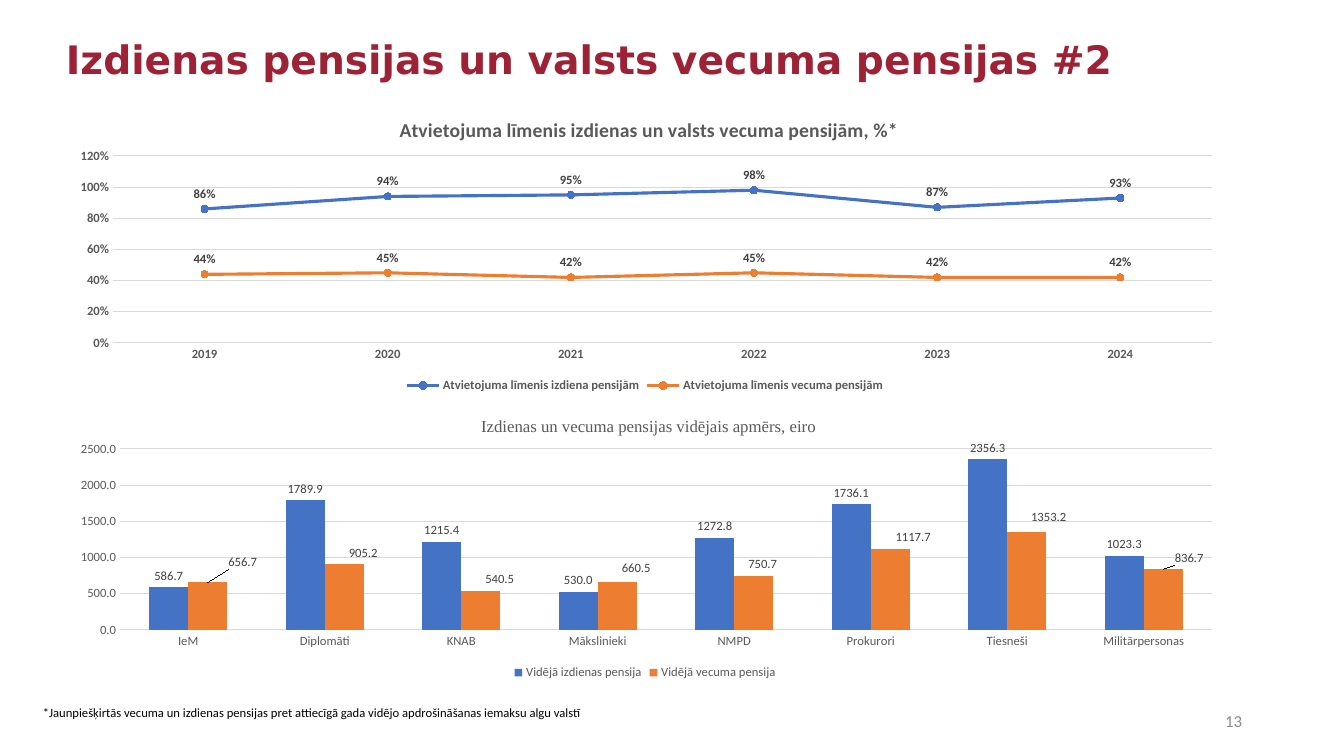
from lxml.etree import SubElement, Element
from pptx import Presentation
from pptx.chart.data import CategoryChartData as ChartData
from pptx.dml.color import RGBColor
from pptx.enum.chart import XL_CHART_TYPE as Kind, XL_LABEL_POSITION as Pos
from pptx.enum.chart import XL_LEGEND_POSITION as Side, XL_MARKER_STYLE as Mark
from pptx.enum.chart import XL_TICK_MARK as Tick
from pptx.enum.text import MSO_ANCHOR as Anchor, PP_ALIGN as Align
from pptx.oxml.ns import qn
from pptx.util import Pt

COLORS = {"red": "9D2235", "blue": "4472C4", "orange": "ED7D31", "grid": "D9D9D9",
          "axis": "595959", "label": "404040", "black": "000000", "number": "8C8C8C"}
SERIES = ("blue", "orange")

# text, box, size, font, colour, bold, anchor, alignment, line spacing
TEXTS = [
    ("Izdienas pensijas un valsts vecuma pensijas #2", (56, 15, 1159, 93),
     28, "DejaVu Sans", "red", True, Anchor.MIDDLE, Align.LEFT, 0.9),
    ("*Jaunpiešķirtās vecuma un izdienas pensijas pret attiecīgā gada vidējo "
     "apdrošināšanas iemaksu algu valstī", (33, 700, 1173, 25),
     9, "Calibri", "black", False, Anchor.TOP, Align.LEFT, 1.0),
    ("13", (950, 701, 302, 40),
     12, "Calibri", "number", False, Anchor.MIDDLE, Align.RIGHT, 1.0),
]

RATE = {
    "kind": Kind.LINE_MARKERS, "box": (56, 95, 1178, 302), "plot": (113, 156, 1099, 187),
    "title": "Atvietojuma līmenis izdienas un valsts vecuma pensijām, %*",
    "spot": (396, 113), "face": ("Calibri", 14), "bold": True,
    "format": "0%", "top": 1.2, "step": 0.2, "pos": Pos.ABOVE,
    "cats": ["2019", "2020", "2021", "2022", "2023", "2024"],
    "data": {
        "Atvietojuma līmenis izdiena pensijām": (0.86, 0.94, 0.95, 0.98, 0.87, 0.93),
        "Atvietojuma līmenis vecuma pensijām": (0.44, 0.45, 0.42, 0.45, 0.42, 0.42),
    },
}
AMOUNT = {
    "kind": Kind.COLUMN_CLUSTERED, "box": (56, 397, 1178, 287), "plot": (120, 449, 1092, 181),
    "title": "Izdienas un vecuma pensijas vidējais apmērs, eiro",
    "spot": (478, 413), "face": ("Times New Roman", 12), "bold": False,
    "format": "0.0", "top": 2500, "step": 500, "pos": Pos.OUTSIDE_END,
    "cats": ["IeM", "Diplomāti", "KNAB", "Mākslinieki", "NMPD", "Prokurori",
             "Tiesneši", "Militārpersonas"],
    "data": {
        "Vidējā izdienas pensija": (586.7, 1789.9, 1215.4, 530, 1272.8, 1736.1, 2356.3, 1023.3),
        "Vidējā vecuma pensija": (656.7, 905.2, 540.5, 660.5, 750.7, 1117.7, 1353.2, 836.7),
    },
}
# label offsets in px for the second series of the column chart
SHIFTS = [(35, -9), (19, 0), (19, 0), (19, -3), (9, 0), (23, 0), (22, -3), (26, 0)]

SCALE = 914400 / 100.8


def px(n):
    return round(n * SCALE)


def rgb(name):
    return RGBColor.from_string(COLORS[name])


def style(font, size, color, bold=False, face="Calibri"):
    font.size, font.bold, font.name = Pt(size), bold, face
    font.color.rgb = rgb(color)


def layout(node, index, **parts):
    """Give a chart part a manual layout as the child at the index."""
    for old in node.findall(qn("c:layout")):
        node.remove(old)
    outer = Element(qn("c:layout"))
    inner = SubElement(outer, qn("c:manualLayout"))
    for tag, val in parts.items():
        SubElement(inner, qn("c:" + tag)).set("val", str(val))
    node.insert(index, outer)


def add_text(slide, text, box, size, face, color, bold, anchor, align, space):
    frame = slide.shapes.add_textbox(*map(px, box)).text_frame
    frame.word_wrap = True
    frame.vertical_anchor = anchor
    frame.text = text
    para = frame.paragraphs[0]
    para.alignment, para.line_spacing = align, space
    style(para.runs[0].font, size, color, bold, face)


def add_graph(slide, info):
    data = ChartData(number_format=info["format"])
    data.categories = info["cats"]
    for name, vals in info["data"].items():
        data.add_series(name, vals)
    chart = slide.shapes.add_chart(info["kind"], *map(px, info["box"]), data).chart
    bold = info["bold"]
    style(chart.font, 10, "black", bold)

    chart.has_title = True
    frame = chart.chart_title.text_frame
    frame.text = info["title"]
    face, size = info["face"]
    style(frame.paragraphs[0].runs[0].font, size, "axis", bold, face)

    chart.has_legend = True
    chart.legend.position = Side.BOTTOM
    chart.legend.include_in_layout = False
    style(chart.legend.font, 9, "axis", bold)

    cat, val = chart.category_axis, chart.value_axis
    for axis in (cat, val):
        axis.major_tick_mark = axis.minor_tick_mark = Tick.NONE
        style(axis.tick_labels.font, 9, "axis", bold)
    val.minimum_scale, val.maximum_scale, val.major_unit = 0, info["top"], info["step"]
    val.tick_labels.number_format = info["format"]
    val.tick_labels.number_format_is_linked = False
    val.format.line.fill.background()
    for line in (cat.format.line, val.major_gridlines.format.line):
        line.color.rgb, line.width = rgb("grid"), Pt(0.75)

    plot = chart.plots[0]
    plot.vary_by_categories = False
    for series, color in zip(plot.series, SERIES):
        labels = series.data_labels
        labels.show_value, labels.position = True, info["pos"]
        labels.number_format = info["format"]
        labels.number_format_is_linked = False
        style(labels.font, 9, "label", bold)
        if info["kind"] == Kind.LINE_MARKERS:
            series.smooth = False
            series.format.line.color.rgb = rgb(color)
            series.format.line.width = Pt(2.25)
            series.marker.style, series.marker.size = Mark.CIRCLE, 5
            look = series.marker.format
            look.line.color.rgb = rgb(color)
        else:
            look = series.format
        look.fill.solid()
        look.fill.fore_color.rgb = rgb(color)

    left, top, wide, high = info["box"]

    def place(x, y):
        return {"xMode": "edge", "yMode": "edge",
                "x": (x - left) / wide, "y": (y - top) / high}

    x, y, w, h = info["plot"]
    area = chart.element.find(".//" + qn("c:plotArea"))
    layout(area, 0, layoutTarget="inner", **place(x, y), w=w / wide, h=h / high)
    layout(chart.element.find(".//" + qn("c:title")), 1, **place(*info["spot"]))
    return chart


def shift_labels(chart, box):
    points = chart.plots[0].series[1].points
    for i in range(len(SHIFTS)):
        label = points[i].data_label
        style(label.font, 9, "label")
        label.position = Pos.OUTSIDE_END
    for node, (x, y) in zip(chart.element.iter(qn("c:dLbl")), SHIFTS):
        layout(node, 1, x=x / box[2], y=y / box[3])


def main():
    deck = Presentation()
    deck.slide_width, deck.slide_height = px(1344), px(756)
    slide = deck.slides.add_slide(deck.slide_layouts[6])
    for item in TEXTS:
        add_text(slide, *item)
    add_graph(slide, RATE)
    shift_labels(add_graph(slide, AMOUNT), AMOUNT["box"])
    deck.save("out.pptx")


if __name__ == "__main__":
    main()
